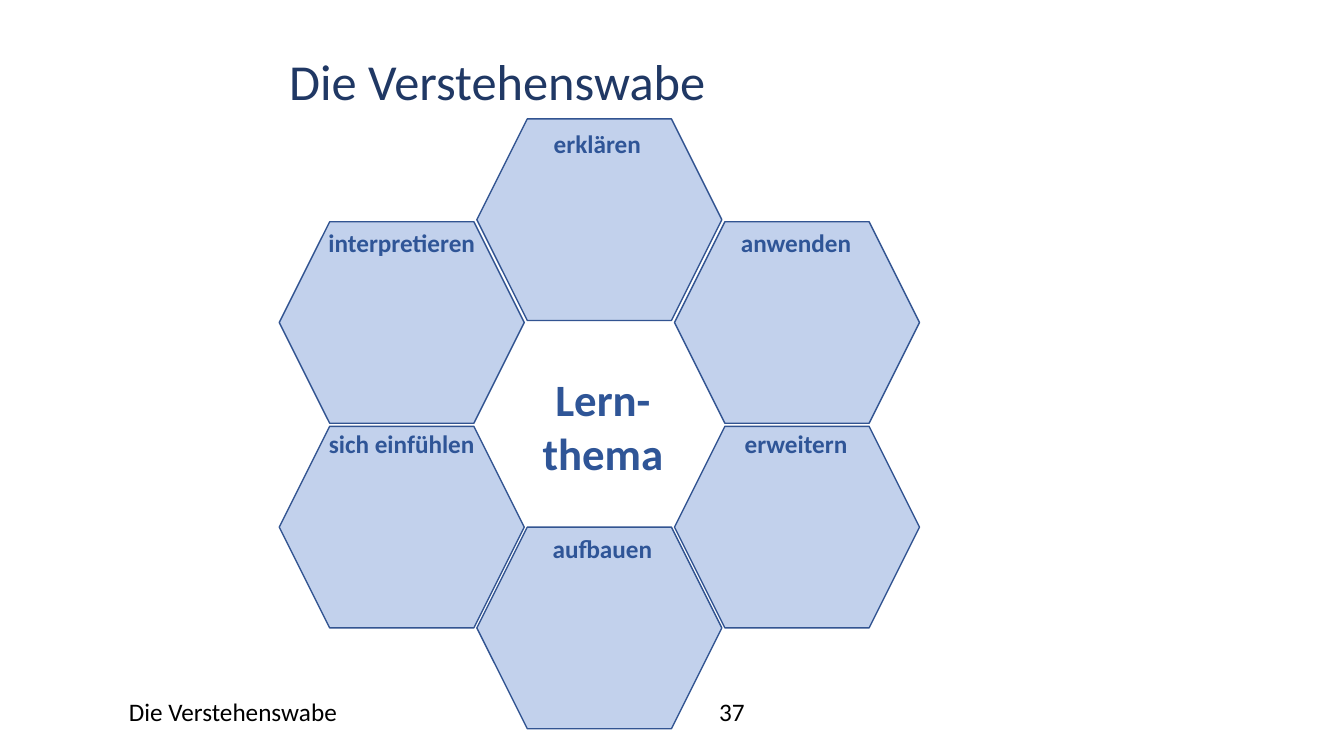
from pptx import Presentation
from pptx.dml.color import RGBColor
from pptx.enum.shapes import MSO_SHAPE
from pptx.enum.text import PP_ALIGN
from pptx.oxml.ns import qn
from pptx.util import Inches, Pt
from lxml.etree import SubElement

# Content: word, column, cell top, label left, label top
CELLS = [
    ("sich einfühlen", 0, 4.23, 3.08, 4.2),
    ("aufbauen", 1, 5.23, 5.07, 5.24),
    ("interpretieren", 0, 2.2, 3.08, 2.21),
    ("erklären", 1, 1.18, 5.02, 1.22),
    ("anwenden", 2, 2.2, 6.99, 2.21),
    ("erweitern", 2, 4.23, 6.99, 4.2),
]
TITLE = "Die Verstehenswabe"
TOPIC = "Lern-thema"
PAGE = "37"

# Layout and colours
LEFT, STEP = 2.77, 1.96
WIDE, HIGH = 2.43, 2
BLUE, EDGE, INK, NAVY, BLACK = "4472C4", "325491", "2F5597", "203864", "000000"
ALPHA = 32

deck = Presentation()
deck.slide_width, deck.slide_height = Inches(13.33), Inches(7.5)
slide = deck.slides.add_slide(deck.slide_layouts[6])


def paint(target, color):
    target.rgb = RGBColor.from_string(color)


def add_text(text, box, size, color, bold=False, align=PP_ALIGN.CENTER):
    frame = slide.shapes.add_textbox(*map(Inches, box)).text_frame
    frame.word_wrap = True
    para = frame.paragraphs[0]
    para.text, para.alignment = text, align
    font = para.font
    font.name, font.size, font.bold = "Calibri", Pt(size), bold
    paint(font.color, color)


def add_cell(x, y):
    cell = slide.shapes.add_shape(
        MSO_SHAPE.HEXAGON, *map(Inches, (x, y, WIDE, HIGH)))
    cell.shadow.inherit = False
    cell.fill.solid()
    paint(cell.fill.fore_color, BLUE)
    tint = cell.fill._xPr.find(qn("a:solidFill"))[0]
    SubElement(tint, qn("a:alpha"), val=str(ALPHA * 1000))
    cell.line.width = Pt(1)
    paint(cell.line.color, EDGE)


# Footer
add_text(TITLE, (1.18, 6.86, 4.5, 0.4), 18, BLACK, align=PP_ALIGN.LEFT)
add_text(PAGE, (5.76, 6.86, 3, 0.4), 18, BLACK)

# Honeycomb
for _, col, top, _, _ in CELLS:
    add_cell(LEFT + col * STEP, top)

# Topic and labels
add_text(TOPIC, (5.02, 3.64, 1.92, 1.18), 32, INK, bold=True)
for word, _, _, x, y in CELLS:
    add_text(word, (x, y, 1.81, 0.4), 18, INK, bold=True)

# Title
add_text(TITLE, (2.77, 0.45, 7.7, 0.71), 36, NAVY, align=PP_ALIGN.LEFT)

deck.save("out.pptx")
